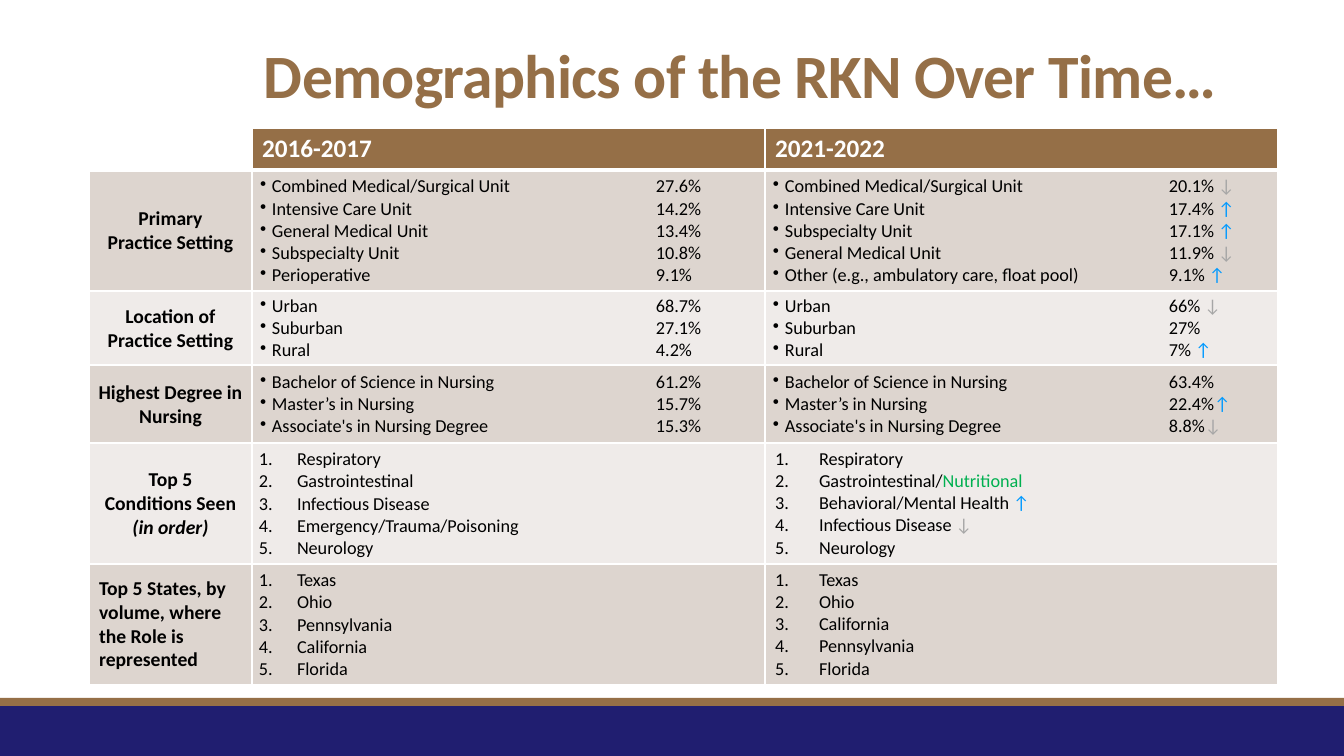
from dataclasses import dataclass

from pptx import Presentation
from pptx.dml.color import RGBColor
from pptx.enum.shapes import MSO_SHAPE
from pptx.enum.text import MSO_ANCHOR, PP_ALIGN
from pptx.oxml.ns import qn
from pptx.util import Pt
from lxml.etree import SubElement

SCALE = 914400 / 100.8


@dataclass(frozen=True)
class Theme:
    font: str = "Calibri"
    title: int = 44
    head: int = 18
    label: int = 14
    body: int = 13
    white: str = "FFFFFF"
    black: str = "000000"
    brown: str = "956F47"
    navy: str = "201E70"
    dark: str = "DDD5CF"
    light: str = "EFEBE9"
    blue: str = "0099FF"
    gray: str = "A6A6A6"
    green: str = "00B050"


T = Theme()
HUES = {"↑": T.blue, "↓": T.gray, "Nutritional": T.green}
WIDTHS = (163, 513, 513)
HEIGHTS = (42, 121, 74, 78, 121, 121)
YEARS = ("2016-2017", "2021-2022")

# A bar in an item starts a run; a tab leads to its share.
SHARES = (
    (("Primary", "Practice Setting"),
     ("Combined Medical/Surgical Unit\t27.6%", "Intensive Care Unit\t14.2%",
      "General Medical Unit\t13.4%", "Subspecialty Unit\t10.8%",
      "Perioperative\t9.1%"),
     ("Combined Medical/Surgical Unit\t20.1% |↓",
      "Intensive Care Unit\t17.4% |↑", "Subspecialty Unit\t17.1% |↑",
      "General Medical Unit\t11.9% |↓",
      "Other (e.g., ambulatory care, float pool)\t9.1% |↑")),
    (("Location of", "Practice Setting"),
     ("Urban\t68.7%", "Suburban\t27.1%", "Rural\t4.2%"),
     ("Urban\t66% |↓", "Suburban\t27%", "Rural\t7% |↑")),
    (("Highest Degree in Nursing",),
     ("Bachelor of Science in Nursing\t61.2%", "Master’s in Nursing\t15.7%",
      "Associate's in Nursing Degree\t15.3%"),
     ("Bachelor of Science in Nursing\t63.4%", "Master’s in Nursing\t22.4%|↑",
      "Associate's in Nursing Degree\t8.8%|↓")),
)
RANKS = (
    (("Top 5", "Conditions Seen", "(in order)"),
     ("Respiratory", "Gastrointestinal", "Infectious Disease",
      "Emergency/Trauma/Poisoning", "Neurology"),
     ("Respiratory", "Gastrointestinal/|Nutritional",
      "Behavioral/Mental Health |↑", "Infectious Disease |↓", "Neurology")),
    (("Top 5 States, by volume, where the Role is represented",),
     ("Texas", "Ohio", "Pennsylvania", "California", "Florida"),
     ("Texas", "Ohio", "California", "Pennsylvania", "Florida")),
)


def px(num):
    return round(num * SCALE)


def rgb(code):
    return RGBColor.from_string(code)


def write(frame, lines, size=T.body, color=T.black, bold=False,
          align=PP_ALIGN.LEFT, mark=None, indent=(0, 0)):
    """Fill a text frame, one paragraph a line; mark is 'dot' or 'num'."""
    for n, line in enumerate(lines):
        para = frame.add_paragraph() if n else frame.paragraphs[0]
        para.alignment = align
        if mark:
            add_mark(para, mark, indent)
        for piece in line.split("|"):
            run = para.add_run()
            run.text = piece
            font = run.font
            font.name, font.size, font.bold = T.font, Pt(size), bold
            font.italic = piece == "(in order)"
            font.color.rgb = rgb(HUES.get(piece, color))


def add_mark(para, mark, indent):
    props = para._p.get_or_add_pPr()
    left, first = indent
    props.set("marL", str(px(left)))
    props.set("indent", str(px(first)))
    if mark == "num":
        SubElement(props, qn("a:buAutoNum"), type="arabicPeriod")
    else:
        SubElement(props, qn("a:buChar"), char="•")
        stops = SubElement(props, qn("a:tabLst"))
        SubElement(stops, qn("a:tab"), pos=str(px(403)), algn="l")


def add_bar(slide, top, height, color):
    bar = slide.shapes.add_shape(MSO_SHAPE.RECTANGLE, 0, px(top),
                                 px(1344), px(height))
    bar.shadow.inherit = False
    bar.fill.solid()
    bar.fill.fore_color.rgb = rgb(color)
    bar.line.fill.background()


def add_title(slide, text):
    box = slide.shapes.add_textbox(px(254), px(31), px(1024), px(85))
    frame = box.text_frame
    frame.word_wrap = True
    frame.vertical_anchor = MSO_ANCHOR.BOTTOM
    write(frame, [text], size=T.title, color=T.brown, bold=True)
    para = frame.paragraphs[0]
    para.line_spacing = 0.85
    para.runs[0].font._element.set("spc", "-50")


def style(cell, color, above=1, below=1, tight=False):
    """Set white borders, fill, anchor and, if tight, narrow margins."""
    props = cell._tc.get_or_add_tcPr()
    for side, width in zip("LRTB", (1, 1, above, below)):
        line = SubElement(props, qn(f"a:ln{side}"), w=str(Pt(width)))
        fill = SubElement(line, qn("a:solidFill"))
        SubElement(fill, qn("a:srgbClr"), val=T.white)
    cell.fill.solid()
    cell.fill.fore_color.rgb = rgb(color)
    cell.vertical_anchor = MSO_ANCHOR.MIDDLE
    if tight:
        cell.margin_left = cell.margin_right = cell.margin_top = px(1)
        cell.margin_bottom = 0


def add_grid(slide):
    shape = slide.shapes.add_table(len(HEIGHTS), len(WIDTHS), px(89), px(128),
                                   px(sum(WIDTHS)), px(sum(HEIGHTS)))
    grid = shape.table
    grid.first_row = grid.horz_banding = False
    for col, width in zip(grid.columns, WIDTHS):
        col.width = px(width)
    for row, height in zip(grid.rows, HEIGHTS):
        row.height = px(height)

    for col, year in enumerate(("",) + YEARS):
        cell = grid.cell(0, col)
        style(cell, T.brown if year else T.white, below=3)
        if year:
            write(cell.text_frame, [year], size=T.head, color=T.white,
                  bold=True)

    for num, (label, *lists) in enumerate(SHARES + RANKS, 1):
        color = T.dark if num % 2 else T.light
        above = 3 if num == 1 else 1
        ranked = num > len(SHARES)
        last = num == len(HEIGHTS) - 1
        cell = grid.cell(num, 0)
        style(cell, color, above, tight=not last)
        write(cell.text_frame, label, size=T.label, bold=True,
              align=PP_ALIGN.LEFT if last else PP_ALIGN.CENTER)
        for col, items in enumerate(lists, 1):
            wide = ranked and col == 2
            cell = grid.cell(num, col)
            style(cell, color, above, tight=not wide)
            indent = (44, -44) if wide else (44, -38) if ranked else (19, -12)
            write(cell.text_frame, items, mark="num" if ranked else "dot",
                  indent=indent)


def main():
    deck = Presentation()
    deck.slide_width, deck.slide_height = px(1344), px(756)
    slide = deck.slides.add_slide(deck.slide_layouts[6])
    add_bar(slide, 706, 50, T.navy)
    add_bar(slide, 698, 8, T.brown)
    add_title(slide, "Demographics of the RKN Over Time…")
    add_grid(slide)
    deck.save("out.pptx")


if __name__ == "__main__":
    main()
